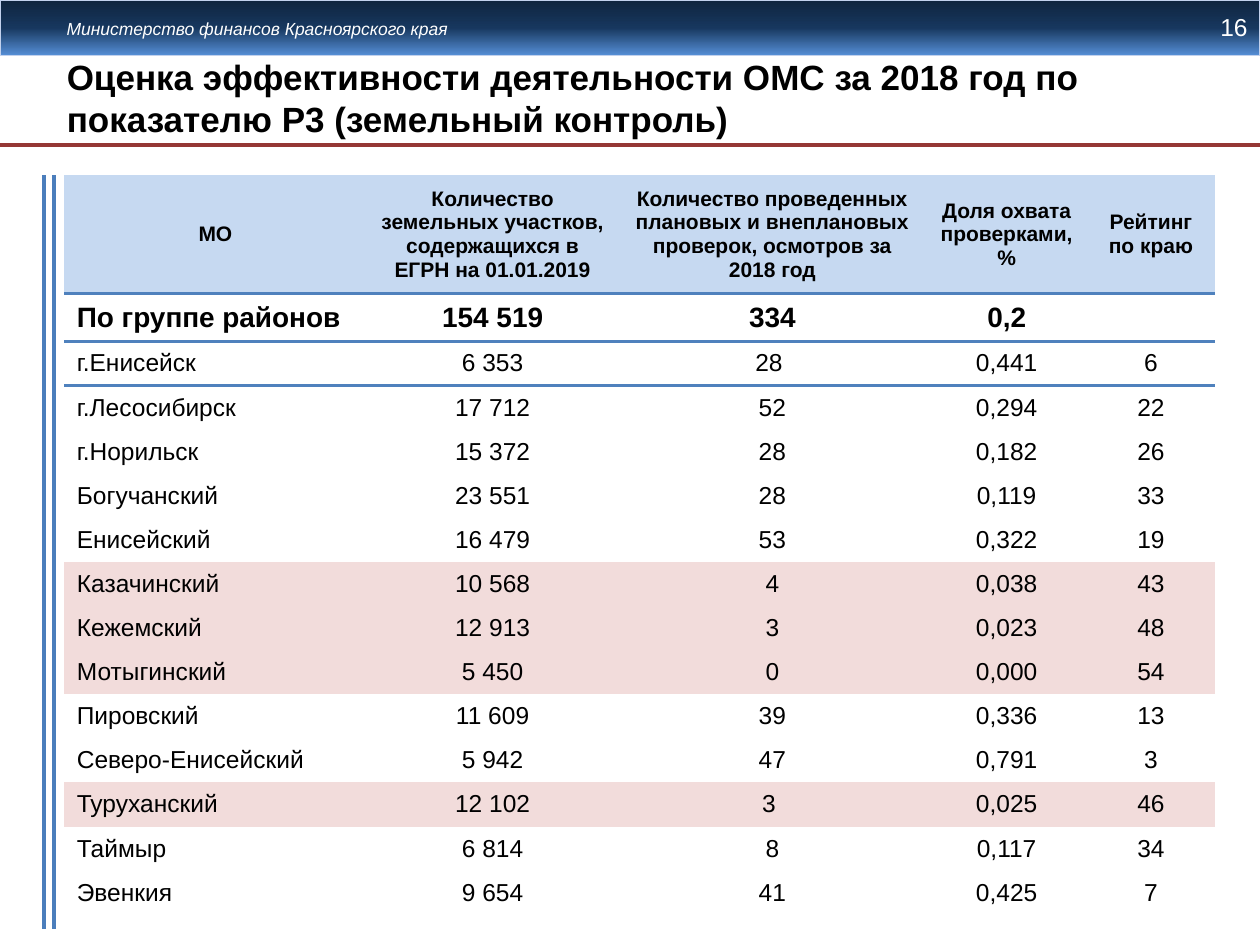
from dataclasses import dataclass

from lxml import etree
from pptx import Presentation
from pptx.dml.color import RGBColor
from pptx.enum.shapes import MSO_CONNECTOR, MSO_SHAPE
from pptx.enum.text import MSO_ANCHOR, MSO_AUTO_SIZE, PP_ALIGN
from pptx.oxml import parse_xml
from pptx.oxml.ns import nsdecls, qn
from pptx.util import Inches, Pt

LEFT, CENTER, RIGHT = PP_ALIGN.LEFT, PP_ALIGN.CENTER, PP_ALIGN.RIGHT
MIDDLE, TOP = MSO_ANCHOR.MIDDLE, MSO_ANCHOR.TOP
RECTANGLE, STRAIGHT = MSO_SHAPE.RECTANGLE, MSO_CONNECTOR.STRAIGHT
NO_AUTOFIT = MSO_AUTO_SIZE.NONE
W, H = 10, 7.5
FONT = "Arial"
NO_GRID_STYLE = "{2D5ABB26-0587-4C30-8999-92F81FD0307C}"
COLORS = {
    "text": "000000", "white": "FFFFFF", "header": "C6D9F1", "low": "F2DCDB",
    "border": "4F81BD", "side": "4B7EBC", "rule": "953735", "band_line": "C2D1ED",
    "band_top": "0F243E", "band_mid": "17375E", "band_end": "558ED5",
}


@dataclass(frozen=True)
class Style:
    size: float
    color: str = "text"
    bold: bool = False
    italic: bool = False


@dataclass(frozen=True)
class Line:
    x1: float
    y1: float
    x2: float
    y2: float
    color: str


@dataclass(frozen=True)
class Row:
    cells: tuple
    height: float = 0.35
    style: Style = Style(14)
    fill: str = "white"
    ruled: str = ""  # sides with a border: T, B
    first_align: PP_ALIGN = LEFT


TABLE_LEFT, TABLE_TOP = 0.51, 1.39
COLUMNS = (2.4, 2, 2.44, 1.28, 1.01)
HEADER = Row(
    ("МО", "Количество земельных участков, содержащихся в ЕГРН на 01.01.2019",
     "Количество проведенных плановых и внеплановых проверок, осмотров за 2018 год",
     "Доля охвата проверками, %", "Рейтинг по краю"),
    0.94, Style(12, bold=True), "header", "B", CENTER)
TOTAL = Row(("По группе районов", "154 519", "334", "0,2", ""),
            0.38, Style(16, bold=True), ruled="TB")
DISTRICTS = [
    Row(("г.Енисейск", "6 353", "28 ", "0,441", "6"), ruled="T"),
    Row(("г.Лесосибирск", "17 712", "52", "0,294", "22")),
    Row(("г.Норильск", "15 372", "28", "0,182", "26")),
    Row(("Богучанский", "23 551", "28", "0,119", "33")),
    Row(("Енисейский", "16 479", "53", "0,322", "19")),
    Row(("Казачинский", "10 568", "4", "0,038", "43"), fill="low"),
    Row(("Кежемский", "12 913", "3", "0,023", "48"), fill="low"),
    Row(("Мотыгинский", "5 450", "0", "0,000", "54"), fill="low"),
    Row(("Пировский", "11 609", "39", "0,336", "13")),
    Row(("Северо-Енисейский", "5 942", "47", "0,791", "3")),
    Row(("Туруханский", "12 102", "3 ", "0,025", "46"), fill="low"),
    Row(("Таймыр", "6 814", "8", "0,117", "34")),
    Row(("Эвенкия", "9 654", "41", "0,425", "7")),
]
LINES = [Line(0, 1.15, W, 1.15, "rule")] + [
    Line(x, 7.37, x, TABLE_TOP, "side") for x in (0.43, 0.35)]


def rgb(name: str) -> RGBColor:
    return RGBColor.from_string(COLORS[name])


def write(tf, text: str, style: Style, align: PP_ALIGN) -> None:
    p = tf.paragraphs[0]
    p.text = text
    p.alignment = align
    for r in p.runs:
        f = r.font
        f.name, f.size = FONT, Pt(style.size)
        f.bold, f.italic = style.bold, style.italic
        f.color.rgb = rgb(style.color)
    if not text:  # keeps an empty cell at the row's text size
        etree.SubElement(p._p, qn("a:endParaRPr"), sz=str(int(style.size * 100)))


def place(sp, x: float, y: float, w: float, h: float) -> None:
    sp.left, sp.top, sp.width, sp.height = (Inches(v) for v in (x, y, w, h))


def add_band(slide) -> None:
    sp = slide.shapes.add_shape(RECTANGLE, 0, 0, Inches(W), Inches(0.44))
    sp.shadow.inherit = False
    sp.line.color.rgb = rgb("band_line")
    sp.line.width = Pt(0.75)
    stops = "".join(
        f'<a:gs pos="{pos}"><a:srgbClr val="{COLORS[name]}"/></a:gs>'
        for pos, name in ((0, "band_top"), (50000, "band_mid"), (100000, "band_end")))
    grad = parse_xml(f'<a:gradFill {nsdecls("a")} rotWithShape="1"><a:gsLst>{stops}</a:gsLst>'
                     '<a:lin ang="5400000" scaled="0"/></a:gradFill>')
    sp._element.spPr.find(qn("a:prstGeom")).addnext(grad)


def add_label(slide, box: tuple, text: str, style: Style, align: PP_ALIGN) -> None:
    tf = slide.shapes.add_textbox(*(Inches(v) for v in box)).text_frame
    tf.word_wrap = True
    tf.vertical_anchor = TOP
    write(tf, text, style, align)


def add_line(slide, line: Line) -> None:
    ends = (Inches(v) for v in (line.x1, line.y1, line.x2, line.y2))
    cxn = slide.shapes.add_connector(STRAIGHT, *ends)
    cxn.line.color.rgb = rgb(line.color)
    cxn.line.width = Pt(2)
    etree.SubElement(cxn._element.spPr, qn("a:effectLst"))


def add_borders(cell, sides: str) -> None:
    for i, side in enumerate(sides):
        ln = parse_xml(f'<a:ln{side} {nsdecls("a")} w="{Pt(1.5)}"><a:solidFill>'
                       f'<a:srgbClr val="{COLORS["border"]}"/></a:solidFill></a:ln{side}>')
        cell._tc.get_or_add_tcPr().insert(i, ln)


def add_table(slide, rows: list[Row]) -> None:
    size = sum(COLUMNS), sum(row.height for row in rows)
    frame = slide.shapes.add_table(
        len(rows), len(COLUMNS), *(Inches(v) for v in (TABLE_LEFT, TABLE_TOP, *size)))
    table = frame.table
    table.horz_banding = False
    table._tbl.tblPr.find(qn("a:tableStyleId")).text = NO_GRID_STYLE
    for col, width in zip(table.columns, COLUMNS):
        col.width = Inches(width)
    for i, row in enumerate(rows):
        table.rows[i].height = Inches(row.height)
        for j, text in enumerate(row.cells):
            cell = table.cell(i, j)
            cell.vertical_anchor = MIDDLE
            cell.fill.solid()
            cell.fill.fore_color.rgb = rgb(row.fill)
            write(cell.text_frame, text, row.style, CENTER if j else row.first_align)
            add_borders(cell, row.ruled)


def main() -> None:
    prs = Presentation()
    prs.slide_width, prs.slide_height = Inches(W), Inches(H)
    slide = prs.slides.add_slide(prs.slide_layouts[5])

    # Header band
    add_band(slide)
    add_label(slide, (9.25, 0.05, 0.75, 0.34), "16", Style(14, "white"), RIGHT)
    add_label(slide, (0.43, 0.09, 3.54, 0.27), "Министерство финансов Красноярского края",
              Style(10, "white", italic=True), LEFT)

    # Title
    title = slide.shapes.title
    place(title, 0.43, 0.44, 9.45, 0.67)
    tf = title.text_frame
    tf.auto_size = NO_AUTOFIT
    tf.word_wrap = True
    tf.vertical_anchor = MIDDLE
    write(tf, "Оценка эффективности деятельности ОМС за 2018 год по показателю Р3 "
              "(земельный контроль)", Style(20, bold=True), LEFT)

    # Table and rules
    add_table(slide, [HEADER, TOTAL, *DISTRICTS])
    for line in LINES:
        add_line(slide, line)

    prs.save("out.pptx")


if __name__ == "__main__":
    main()
